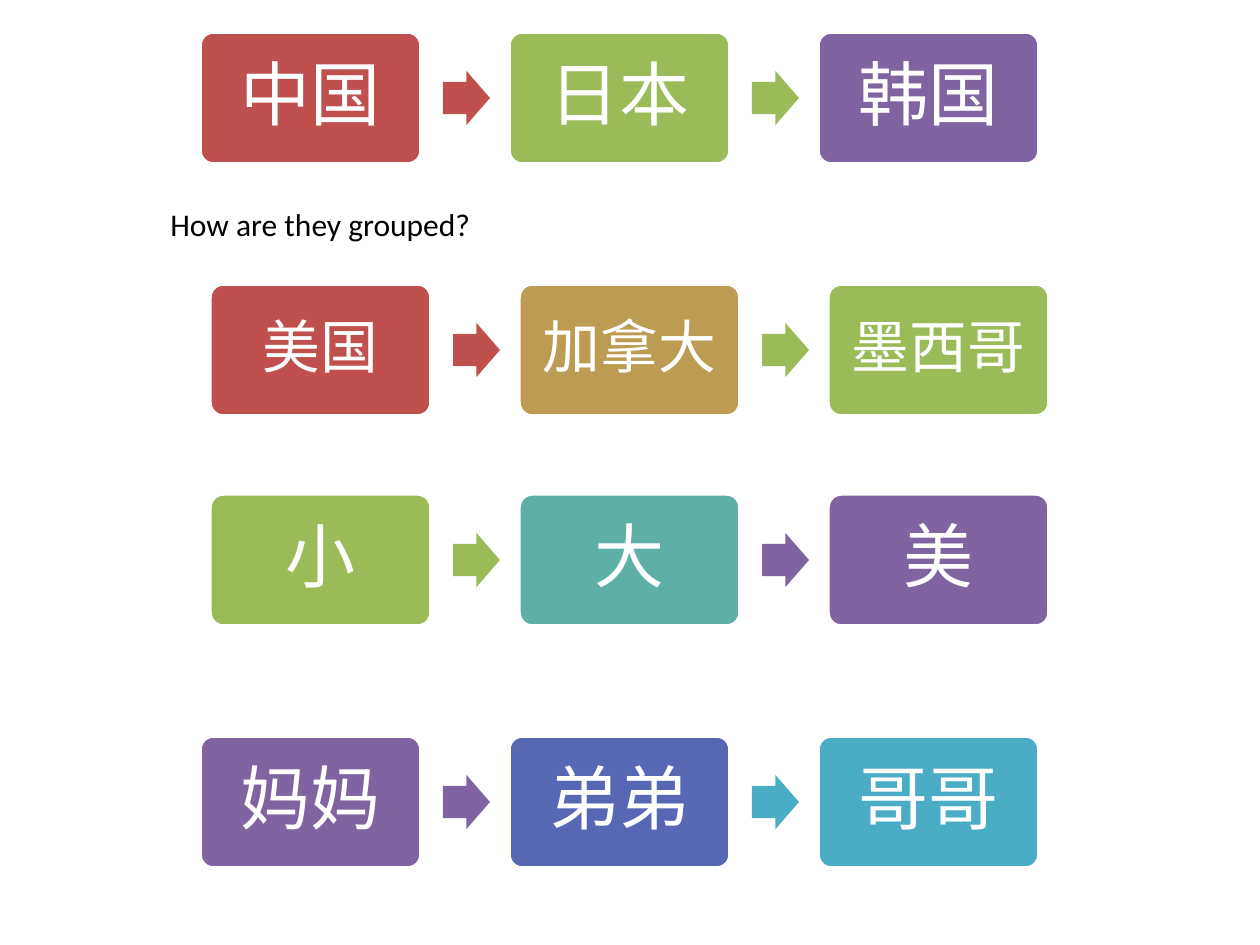
from pptx import Presentation
from pptx.dml.color import RGBColor
from pptx.enum.shapes import MSO_SHAPE as Preset
from pptx.enum.text import MSO_ANCHOR as Anchor, MSO_AUTO_SIZE as AutoSize, PP_ALIGN as Align
from pptx.util import Emu, Pt

SCALE = 914400 / 126
FONT = "Calibri"
COLORS = {
    "red": "C0504D",
    "green": "9BBB59",
    "purple": "8064A2",
    "gold": "BD9B53",
    "teal": "5EAFA6",
    "indigo": "5767B4",
    "blue": "4BACC6",
    "white": "FFFFFF",
    "black": "000000",
}
CARD_WIDTH, CARD_HEIGHT, CARD_PITCH = 221, 132, 309
ARROW_OFFSET, ARROW_WIDTH, ARROW_HEIGHT = 243, 47, 54

ROWS = [
    (200, 32, 40, 21, [("中国", "red"), ("日本", "green"), ("韩国", "purple")], ["red", "green"]),
    (210, 284, 33, 18, [("美国", "red"), ("加拿大", "gold"), ("墨西哥", "green")], ["red", "green"]),
    (210, 494, 40, 21, [("小", "green"), ("大", "teal"), ("美", "purple")], ["green", "purple"]),
    (200, 736, 40, 21, [("妈妈", "purple"), ("弟弟", "indigo"), ("哥哥", "blue")], ["purple", "blue"]),
]


def px(length):
    return Emu(round(length * SCALE))


def rgb(name):
    return RGBColor.from_string(COLORS[name])


def add_run(paragraph, text, size, color):
    run = paragraph.add_run()
    run.text = text
    run.font.name = FONT
    run.font.size = Pt(size)
    run.font.color.rgb = rgb(color)


def add_filled_shape(slide, preset, left, top, width, height, color, adjustments):
    shape = slide.shapes.add_shape(preset, px(left), px(top), px(width), px(height))
    shape.shadow.inherit = False
    shape.fill.solid()
    shape.fill.fore_color.rgb = rgb(color)
    for index, value in enumerate(adjustments):
        shape.adjustments[index] = value
    return shape


def add_card(slide, left, top, text, color, size, margin):
    shape = add_filled_shape(slide, Preset.ROUNDED_RECTANGLE, left, top,
                             CARD_WIDTH, CARD_HEIGHT, color, [0.1])
    shape.line.color.rgb = rgb("white")
    shape.line.width = Pt(2)
    frame = shape.text_frame
    frame.word_wrap = True
    frame.vertical_anchor = Anchor.MIDDLE
    frame.margin_left = frame.margin_right = px(margin)
    frame.margin_top = frame.margin_bottom = px(margin)
    paragraph = frame.paragraphs[0]
    paragraph.alignment = Align.CENTER
    paragraph.line_spacing = 0.9
    paragraph.space_after = Pt(round(size * 0.35))
    add_run(paragraph, text, size, "white")


def add_arrow(slide, left, top, color):
    shape = add_filled_shape(slide, Preset.RIGHT_ARROW, left, top,
                             ARROW_WIDTH, ARROW_HEIGHT, color, [0.6, 0.5])
    shape.line.fill.background()


def add_row(slide, left, top, size, margin, cards, arrow_colors):
    for index, (text, color) in enumerate(cards):
        add_card(slide, left + index * CARD_PITCH, top, text, color, size, margin)
    arrow_top = top + (CARD_HEIGHT - ARROW_HEIGHT) // 2
    for index, color in enumerate(arrow_colors):
        add_arrow(slide, left + ARROW_OFFSET + index * CARD_PITCH, arrow_top, color)


def add_question(slide, text):
    frame = slide.shapes.add_textbox(px(158), px(199), px(998), px(53)).text_frame
    frame.word_wrap = True
    frame.auto_size = AutoSize.SHAPE_TO_FIT_TEXT
    add_run(frame.paragraphs[0], text, 18, "black")


def main():
    presentation = Presentation()
    presentation.slide_width = px(1260)
    presentation.slide_height = px(945)
    slide = presentation.slides.add_slide(presentation.slide_layouts[6])
    for row in ROWS:
        add_row(slide, *row)
    add_question(slide, "How are they grouped?")
    presentation.save("out.pptx")


if __name__ == "__main__":
    main()
